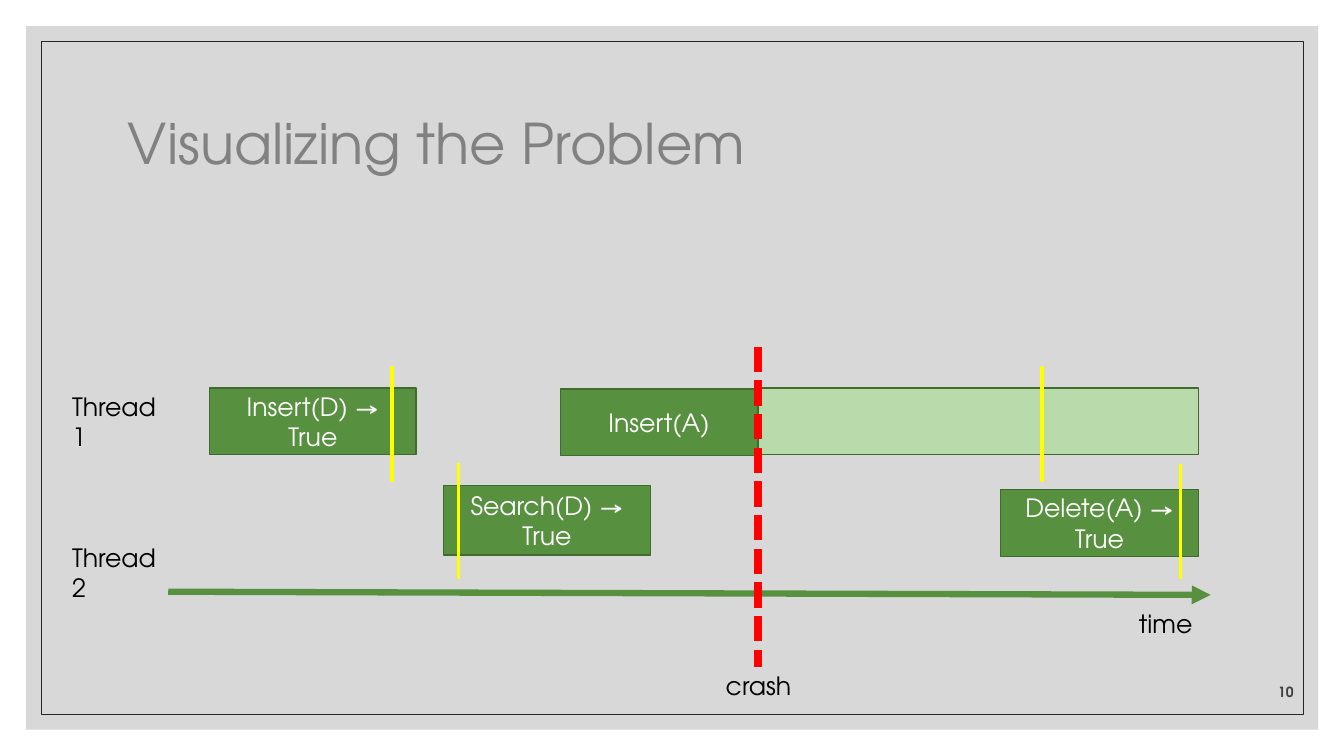
from lxml.etree import SubElement
from pptx import Presentation
from pptx.dml.color import RGBColor
from pptx.enum.dml import MSO_LINE
from pptx.enum.shapes import MSO_CONNECTOR, MSO_SHAPE
from pptx.enum.text import MSO_ANCHOR as ANCHOR, PP_ALIGN as ALIGN
from pptx.oxml.ns import qn
from pptx.util import Cm, Pt

FONT = "TeX Gyre Adventor"
COLORS = {
    "panel": "BFBFBF", "ink": "262626", "number": "404040", "text": "000000",
    "white": "FFFFFF", "green": "57903F", "pale": "B9DAAB", "edge": "406B2F",
    "crash": "FF0000", "mark": "FFFF00",
}

TITLE = "Visualizing the Problem"
THREADS = ["Thread 1", "Thread 2"]
PANEL = (0.66, 0.66, 32.56, 17.73)
FRAME = (1.04, 1.04, 31.8, 16.97)
PENDING = (19.1, 9.78, 11.1, 1.68)
OPERATIONS = [
    ("Insert(D) → True", (5.28, 9.78, 5.21, 1.68)),
    ("Search(D) → True", (11.18, 12.24, 5.21, 1.75)),
    ("Insert(A)", (14.12, 9.8, 4.98, 1.68)),
    ("Delete(A) →\nTrue", (25.22, 12.34, 4.98, 1.68)),
]
TIMELINE = (4.24, 14.91, 30.51, 14.99)
CRASH = (19.1, 8.74, 19.1, 16.81)
MARKS = [(9.88, 9.22), (11.56, 11.66), (26.26, 9.22), (29.74, 11.68)]
MARK_HEIGHT = 2.92


def rgb(name):
    return RGBColor.from_string(COLORS[name])


def write(tf, lines, size, color, align=ALIGN.LEFT, anchor=ANCHOR.TOP, bold=False):
    tf.word_wrap = True
    tf.vertical_anchor = anchor
    tf.text = "\n".join(lines)
    for p in tf.paragraphs:
        p.alignment = align
        p.font.name = FONT
        p.font.size = Pt(size)
        p.font.bold = bold
        p.font.color.rgb = rgb(color)


def add_box(slide, place, fill, edge, width=1):
    sp = slide.shapes.add_shape(MSO_SHAPE.RECTANGLE, *map(Cm, place))
    sp.shadow.inherit = False
    if fill:
        sp.fill.solid()
        sp.fill.fore_color.rgb = rgb(fill)
    else:
        sp.fill.background()
    if edge:
        sp.line.color.rgb = rgb(edge)
        sp.line.width = Pt(width)
    else:
        sp.line.fill.background()
    return sp


def add_text(slide, place, lines, size=18, color="text", **style):
    tf = slide.shapes.add_textbox(*map(Cm, place)).text_frame
    write(tf, lines, size, color, **style)
    return tf


def add_line(slide, ends, color, width):
    line = slide.shapes.add_connector(MSO_CONNECTOR.STRAIGHT, *map(Cm, ends))
    line.line.color.rgb = rgb(color)
    line.line.width = Pt(width)
    SubElement(line._element.spPr, qn("a:effectLst"))
    return line


def main():
    prs = Presentation()
    prs.slide_width, prs.slide_height = Cm(33.87), Cm(19.05)
    slide = prs.slides.add_slide(prs.slide_layouts[5])

    panel = add_box(slide, PANEL, "panel", None)
    tint = panel._element.spPr.find(qn("a:solidFill")).find(qn("a:srgbClr"))
    SubElement(tint, qn("a:alpha"), val="60000")
    add_box(slide, FRAME, None, "ink", 0.5)
    add_box(slide, PENDING, "pale", "edge")

    title = slide.shapes.title
    title.left, title.top, title.width, title.height = map(Cm, (2.97, 1.78, 27.94, 3.81))
    write(title.text_frame, [TITLE], 40, "ink", anchor=ANCHOR.MIDDLE)
    title.text_frame.paragraphs[0].line_spacing = 0.9

    add_text(slide, (30.51, 16.76, 2.34, 1.02), ["10"], 10, "number",
             align=ALIGN.RIGHT, anchor=ANCHOR.BOTTOM, bold=True)
    threads = add_text(slide, (1.57, 9.73, 2.82, 4.11), THREADS)
    threads.paragraphs[1].space_before = Pt(65)

    timeline = add_line(slide, TIMELINE, "green", 4.5)
    SubElement(timeline.line._get_or_add_ln(), qn("a:tailEnd"), type="triangle")
    add_text(slide, (28.45, 15.21, 3.23, 1.02), ["time"])

    for label, place in OPERATIONS:
        sp = add_box(slide, place, "green", "edge")
        write(sp.text_frame, label.split("\n"), 18, "white", ALIGN.CENTER, ANCHOR.MIDDLE)

    add_line(slide, CRASH, "crash", 6).line.dash_style = MSO_LINE.SQUARE_DOT
    add_text(slide, (17.5, 16.76, 3.23, 1.02), ["crash"], align=ALIGN.CENTER)

    for x, top in MARKS:
        add_line(slide, (x, top, x, top + MARK_HEIGHT), "mark", 2.25)

    prs.save("out.pptx")


if __name__ == "__main__":
    main()
